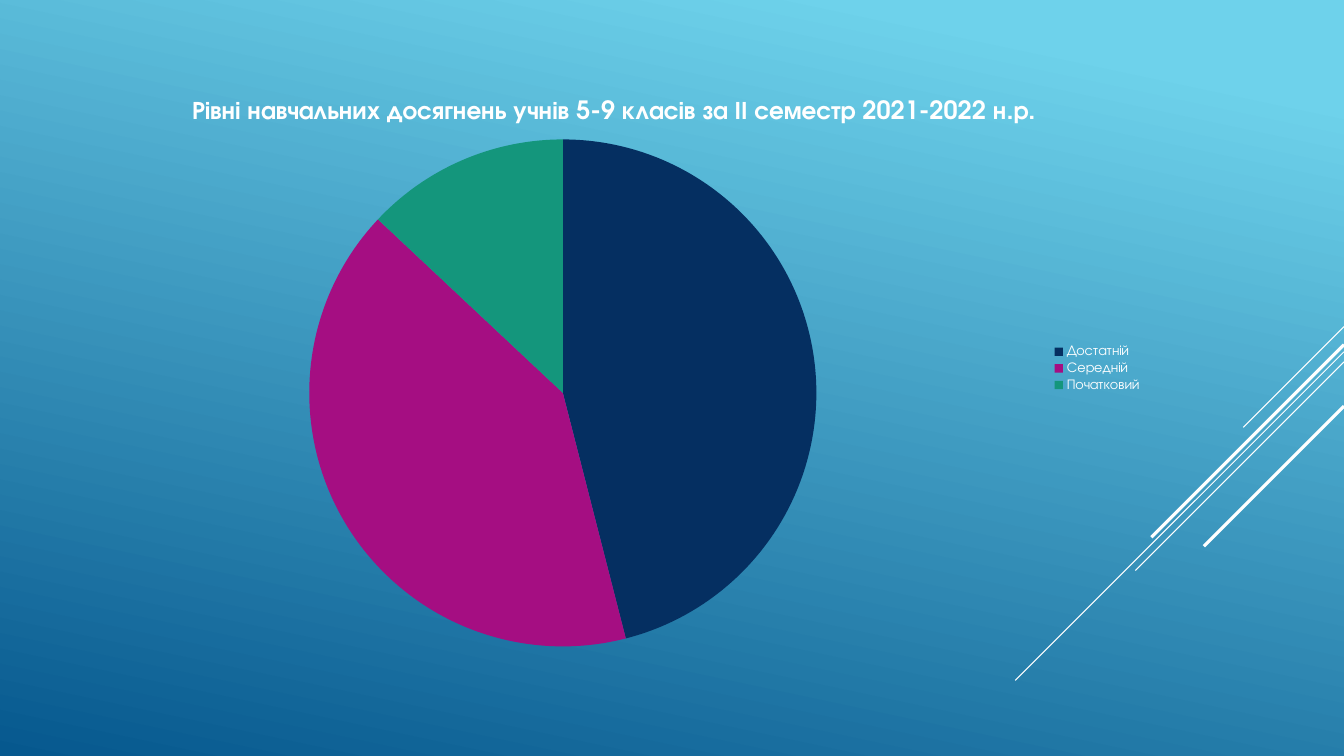
"""Build a slide with a pie chart of pupils' achievement levels."""
from dataclasses import dataclass

from lxml import etree
from pptx import Presentation
from pptx.chart.data import CategoryChartData
from pptx.dml.color import RGBColor
from pptx.enum.chart import XL_CHART_TYPE, XL_LEGEND_POSITION
from pptx.enum.shapes import MSO_CONNECTOR
from pptx.oxml import parse_xml
from pptx.oxml.ns import nsdecls, qn
from pptx.util import Inches, Pt

PIE = XL_CHART_TYPE.PIE
RIGHT = XL_LEGEND_POSITION.RIGHT
STRAIGHT = MSO_CONNECTOR.STRAIGHT

TITLE = "Рівні навчальних досягнень учнів 5-9 класів за ІІ семестр 2021-2022 н.р."
LEVELS = [
    ("Достатній", 46, "052F61"),
    ("Середній", 41, "A50E82"),
    ("Початковий", 13, "14967C"),
]
WIDTH, HEIGHT = 13.33, 7.5
CHART_BOX = (0.75, 0.75, 10.68, 5.81)
PIE_LAYOUT = {"x": 0.217, "y": 0.109, "w": 0.471, "h": 0.866}
STREAKS = [
    (3.24, 1.0, 0.75),
    (3.49, 3.26, 0.75),
    (3.59, 2.07, 0.75),
    (3.42, 1.91, 2.25),
    (4.03, 1.39, 2.25),
]


@dataclass(frozen=True)
class Theme:
    font: str = "TeX Gyre Adventor"
    white: str = "FFFFFF"
    gradient: tuple = ((0.1, "6ED2EB"), (1.0, "06588E"))
    angle: int = 102
    title: int = 18
    body: int = 10


THEME = Theme()


def rgb(value):
    return RGBColor.from_string(value)


def style_font(font, size, bold=False):
    font.name = THEME.font
    font.size = Pt(size)
    font.bold = bold
    font.color.rgb = rgb(THEME.white)


def paint_background(s):
    fill = s.background.fill
    fill.gradient()
    fill.gradient_angle = 360 - THEME.angle
    for stop, (position, color) in zip(fill.gradient_stops, THEME.gradient):
        stop.position = position
        stop.color.rgb = rgb(color)


def add_streak(s, top, reach, weight):
    line = s.shapes.add_connector(
        STRAIGHT, Inches(WIDTH), Inches(top),
        Inches(WIDTH - reach), Inches(top + reach))
    line.line.color.rgb = rgb(THEME.white)
    line.line.width = Pt(weight)
    etree.SubElement(line._element.spPr, qn("a:effectLst"))


def place_plot(chart):
    area = chart._chartSpace.chart.plotArea
    for old in area.findall(qn("c:layout")):
        area.remove(old)
    sizes = "".join(f'<c:{k} val="{v}"/>' for k, v in PIE_LAYOUT.items())
    area.insert(0, parse_xml(
        f'<c:layout {nsdecls("c")}><c:manualLayout>'
        '<c:layoutTarget val="inner"/><c:xMode val="edge"/><c:yMode val="edge"/>'
        f'{sizes}</c:manualLayout></c:layout>'))


def add_levels_chart(s):
    data = CategoryChartData()
    data.categories = [name for name, _, _ in LEVELS]
    data.add_series("Series 1", [value for _, value, _ in LEVELS])
    chart = s.shapes.add_chart(PIE, *map(Inches, CHART_BOX), data).chart
    style_font(chart.font, THEME.body)
    chart.has_title = True
    tf = chart.chart_title.text_frame
    tf.text = TITLE
    style_font(tf.paragraphs[0].runs[0].font, THEME.title, bold=True)
    chart.chart_title.include_in_layout = False
    chart.has_legend = True
    chart.legend.position = RIGHT
    chart.legend.include_in_layout = False
    style_font(chart.legend.font, THEME.body)
    plot = chart.plots[0]
    plot.vary_by_categories = True
    for i, (_, _, color) in enumerate(LEVELS):
        fill = plot.series[0].points[i].format.fill
        fill.solid()
        fill.fore_color.rgb = rgb(color)
    place_plot(chart)


def main():
    prs = Presentation()
    prs.slide_width, prs.slide_height = Inches(WIDTH), Inches(HEIGHT)
    s = prs.slides.add_slide(prs.slide_layouts[6])
    paint_background(s)
    for streak in STREAKS:
        add_streak(s, *streak)
    add_levels_chart(s)
    prs.save("out.pptx")


if __name__ == "__main__":
    main()
